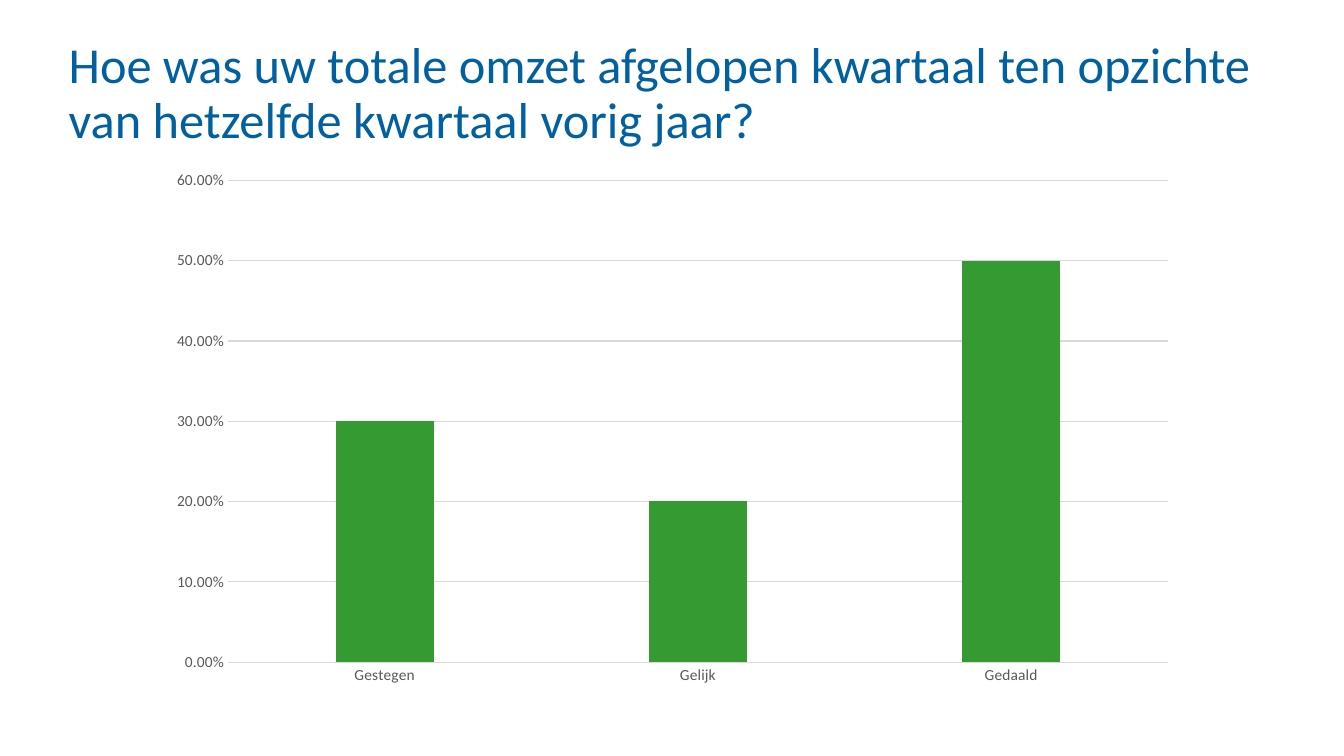
from dataclasses import dataclass

from pptx import Presentation
from pptx import util as u
from pptx.chart.data import CategoryChartData
from pptx.dml.color import RGBColor
from pptx.enum import chart as ch
from pptx.enum import text

FONT = "Calibri"
BLUE = RGBColor(0x00, 0x60, 0xA0)
GREEN = RGBColor(0x35, 0x9A, 0x32)
LABEL_GREY = RGBColor(0x59, 0x59, 0x59)
LINE_GREY = RGBColor(0xD9, 0xD9, 0xD9)


@dataclass(frozen=True)
class Answer:
    label: str
    share: float


QUESTION = ("Hoe was uw totale omzet afgelopen kwartaal ten opzichte "
            "van hetzelfde kwartaal vorig jaar?")
ANSWERS = [Answer("Gestegen", 0.3), Answer("Gelijk", 0.2), Answer("Gedaald", 0.5)]


def style_line(line) -> None:
    line.color.rgb = LINE_GREY
    line.width = u.Pt(0.75)


def style_axis(axis) -> None:
    axis.major_tick_mark = axis.minor_tick_mark = ch.XL_TICK_MARK.NONE
    font = axis.tick_labels.font
    font.name, font.size = FONT, u.Pt(11)
    font.color.rgb = LABEL_GREY


def add_question(slide, question: str) -> None:
    box = slide.shapes.add_textbox(u.Cm(1.73), u.Cm(1.02), u.Cm(30.23), u.Cm(1.93))
    frame = box.text_frame
    frame.word_wrap = True
    frame.vertical_anchor = text.MSO_ANCHOR.TOP
    frame.margin_left = frame.margin_right = 0
    frame.margin_top = frame.margin_bottom = 0
    heading = frame.paragraphs[0]
    heading.text = question
    heading.line_spacing = 0.9
    heading.font.name, heading.font.size = FONT, u.Pt(36)
    heading.font.color.rgb = BLUE


def add_turnover_chart(slide, answers: list[Answer]) -> None:
    turnover = CategoryChartData(number_format="0.00%")
    turnover.categories = [answer.label for answer in answers]
    turnover.add_series("Series 1", [answer.share for answer in answers])
    chart = slide.shapes.add_chart(
        ch.XL_CHART_TYPE.COLUMN_CLUSTERED,
        u.Cm(3.94), u.Cm(4.04), u.Cm(26.01), u.Cm(13.49), turnover).chart
    chart.has_legend = False
    chart.has_title = False
    chart.font.name, chart.font.size = FONT, u.Pt(10)

    # Columns
    columns = chart.plots[0]
    columns.gap_width, columns.overlap = 219, -27
    columns.vary_by_categories = False
    fill = columns.series[0].format.fill
    fill.solid()
    fill.fore_color.rgb = GREEN

    # Axes and gridlines
    answer_axis, share_axis = chart.category_axis, chart.value_axis
    for axis in (answer_axis, share_axis):
        style_axis(axis)
    style_line(answer_axis.format.line)
    share_axis.format.line.fill.background()
    share_axis.has_major_gridlines = True
    style_line(share_axis.major_gridlines.format.line)
    share_axis.minimum_scale, share_axis.maximum_scale = 0, 0.6
    share_axis.major_unit = 0.1
    share_axis.tick_labels.number_format = "0.00%"
    share_axis.tick_labels.number_format_is_linked = False


def main() -> None:
    deck = Presentation()
    deck.slide_width, deck.slide_height = u.Cm(33.87), u.Cm(19.05)
    slide = deck.slides.add_slide(deck.slide_layouts[6])
    add_question(slide, QUESTION)
    add_turnover_chart(slide, ANSWERS)
    deck.save("out.pptx")


if __name__ == "__main__":
    main()
